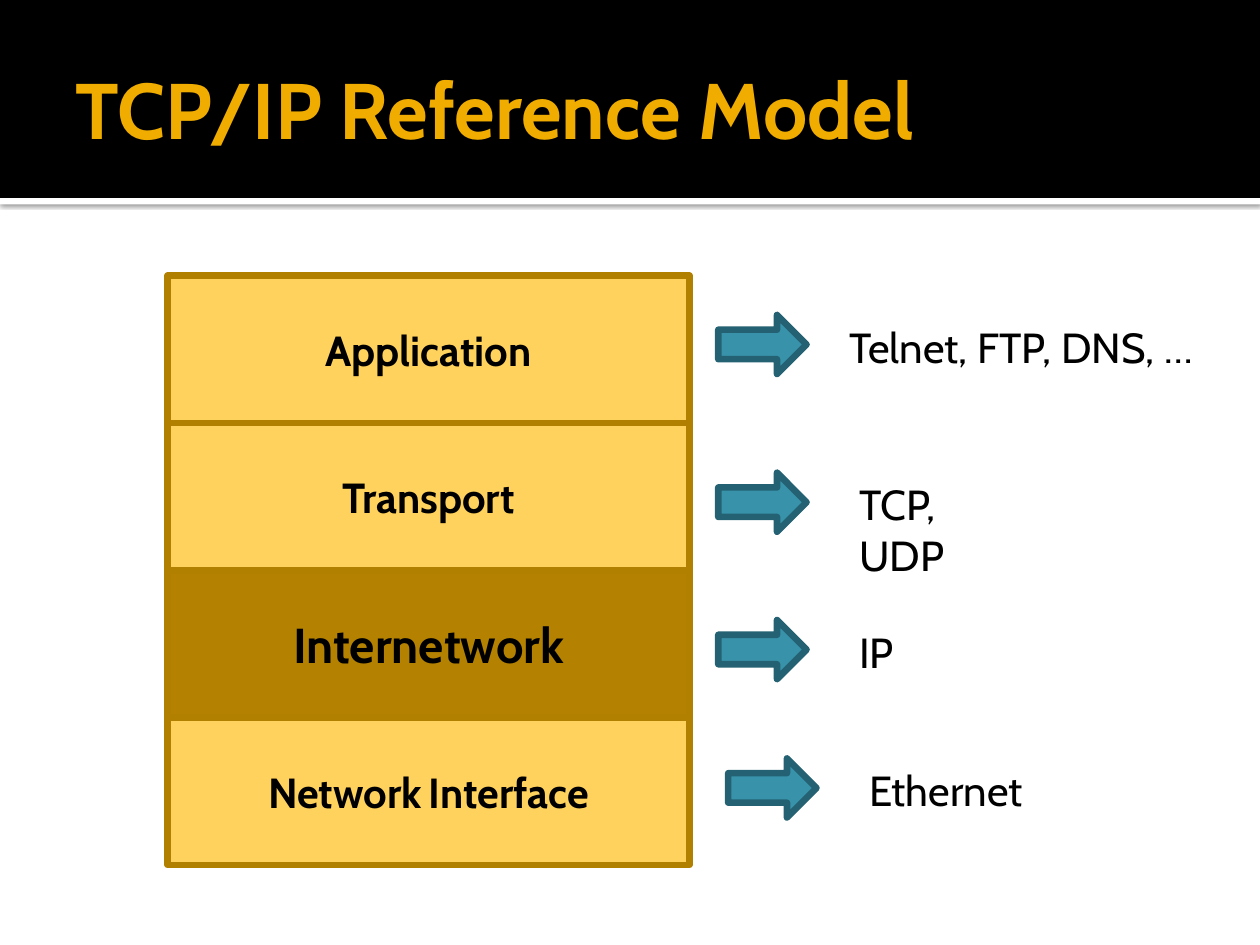
"""Build the TCP/IP reference model slide with its layers and protocols."""
from dataclasses import dataclass

from lxml.etree import SubElement
from pptx import Presentation
from pptx.dml.color import RGBColor as Color
from pptx.enum.shapes import MSO_SHAPE as Preset
from pptx.enum.text import MSO_ANCHOR as Anchor, MSO_AUTO_SIZE as AutoSize, PP_ALIGN as Align
from pptx.oxml.ns import qn
from pptx.util import Cm, Pt


@dataclass(frozen=True)
class Theme:
    font: str = "Cabin"
    black: str = "000000"
    white: str = "FFFFFF"
    title: str = "F0AD00"
    layer: str = "FFD25D"
    layer_focus: str = "B48200"
    layer_line: str = "B28000"
    arrow: str = "3792AA"
    arrow_line: str = "246172"
    title_size: float = 45
    focus_size: float = 28
    text_size: float = 24
    space_size: float = 18
    line_width: float = 3.78


THEME = Theme()
TITLE = "TCP/IP Reference Model"
LAYERS = [
    ([("Application", THEME.text_size)], THEME.layer),
    ([("Transport", THEME.text_size)], THEME.layer),
    ([("Internetwork", THEME.focus_size)], THEME.layer_focus),
    ([("Network", THEME.text_size), (" ", THEME.space_size), ("Interface", THEME.text_size)],
     THEME.layer),
]
PROTOCOLS = [
    {"text": "Telnet, FTP, DNS, …", "arrow": 14.48, "left": 16.87, "top": 6.35, "width": 7.54},
    {"text": "TCP, UDP", "arrow": 14.48, "left": 17.07, "top": 9.53, "width": 3.8, "wrap": True},
    {"text": "IP", "arrow": 14.48, "left": 17.07, "top": 12.5, "width": 1.22},
    {"text": "Ethernet", "arrow": 14.68, "left": 17.27, "top": 15.29, "width": 3.63},
]
SLIDE_WIDTH, SLIDE_HEIGHT = 25.4, 19.05
HEADER_HEIGHT, STRIP_HEIGHT = 3.99, 0.13
STACK_LEFT, STACK_TOP, LAYER_WIDTH, LAYER_HEIGHT = 3.38, 5.56, 10.52, 2.97
ARROW_WIDTH, ARROW_HEIGHT, LABEL_HEIGHT = 1.78, 1.19, 1.27


def add_block(slide, preset, place, fill, line=None):
    block = slide.shapes.add_shape(preset, *map(Cm, place))
    block.shadow.inherit = False
    block.fill.solid()
    block.fill.fore_color.rgb = Color.from_string(fill)
    if line:
        block.line.color.rgb = Color.from_string(line)
        block.line.width = Pt(THEME.line_width)
    else:
        block.line.fill.background()
    return block


def style_font(font, size=None, color=THEME.black, bold=False):
    font.name = THEME.font
    font.bold = bold
    font.color.rgb = Color.from_string(color)
    if size:
        font.size = Pt(size)


def add_header(slide):
    strip = add_block(slide, Preset.RECTANGLE,
                      (0, HEADER_HEIGHT, SLIDE_WIDTH, STRIP_HEIGHT), THEME.white)
    effects = strip.element.spPr.find(qn("a:effectLst"))
    shadow = SubElement(effects, qn("a:outerShdw"), blurRad=str(Pt(2.5)), dist=str(Pt(0.8)),
                        dir="5400000", algn="t", rotWithShape="0")
    tint = SubElement(shadow, qn("a:srgbClr"), val=THEME.black)
    SubElement(tint, qn("a:alpha"), val="60000")
    add_block(slide, Preset.RECTANGLE, (0, 0, SLIDE_WIDTH, HEADER_HEIGHT), THEME.black)

    title = slide.shapes.title
    title.element.getparent().append(title.element)
    title.left, title.top, title.width, title.height = map(Cm, (1.27, 0.43, 22.86, 3.48))
    frame = title.text_frame
    frame.text = TITLE
    frame.auto_size = AutoSize.NONE
    frame.vertical_anchor = Anchor.MIDDLE
    frame.margin_left = Cm(0.25)
    frame.margin_right = frame.margin_top = frame.margin_bottom = Cm(0.13)
    para = frame.paragraphs[0]
    para.alignment = Align.LEFT
    style_font(para.font, THEME.title_size, THEME.title, bold=True)


def add_layers(slide):
    for index, (spans, fill) in reversed(list(enumerate(LAYERS))):
        place = (STACK_LEFT, STACK_TOP + index * LAYER_HEIGHT, LAYER_WIDTH, LAYER_HEIGHT)
        layer = add_block(slide, Preset.RECTANGLE, place, fill, THEME.layer_line)
        layer.text_frame.vertical_anchor = Anchor.MIDDLE
        para = layer.text_frame.paragraphs[0]
        para.alignment = Align.CENTER
        style_font(para.font, bold=True)
        for text, size in spans:
            span = para.add_run()
            span.text = text
            span.font.size = Pt(size)


def add_protocols(slide):
    for protocol in PROTOCOLS:
        add_block(slide, Preset.RIGHT_ARROW,
                  (protocol["arrow"], protocol["top"], ARROW_WIDTH, ARROW_HEIGHT),
                  THEME.arrow, THEME.arrow_line)
        place = (protocol["left"], protocol["top"], protocol["width"], LABEL_HEIGHT)
        box = slide.shapes.add_textbox(*map(Cm, place))
        frame = box.text_frame
        frame.text = protocol["text"]
        frame.word_wrap = protocol.get("wrap", False)
        frame.auto_size = AutoSize.SHAPE_TO_FIT_TEXT
        style_font(frame.paragraphs[0].font, THEME.text_size)


def main():
    deck = Presentation()
    deck.slide_width, deck.slide_height = Cm(SLIDE_WIDTH), Cm(SLIDE_HEIGHT)
    slide = deck.slides.add_slide(deck.slide_layouts.get_by_name("Title Only"))
    add_header(slide)
    add_layers(slide)
    add_protocols(slide)
    deck.save("out.pptx")


if __name__ == "__main__":
    main()
